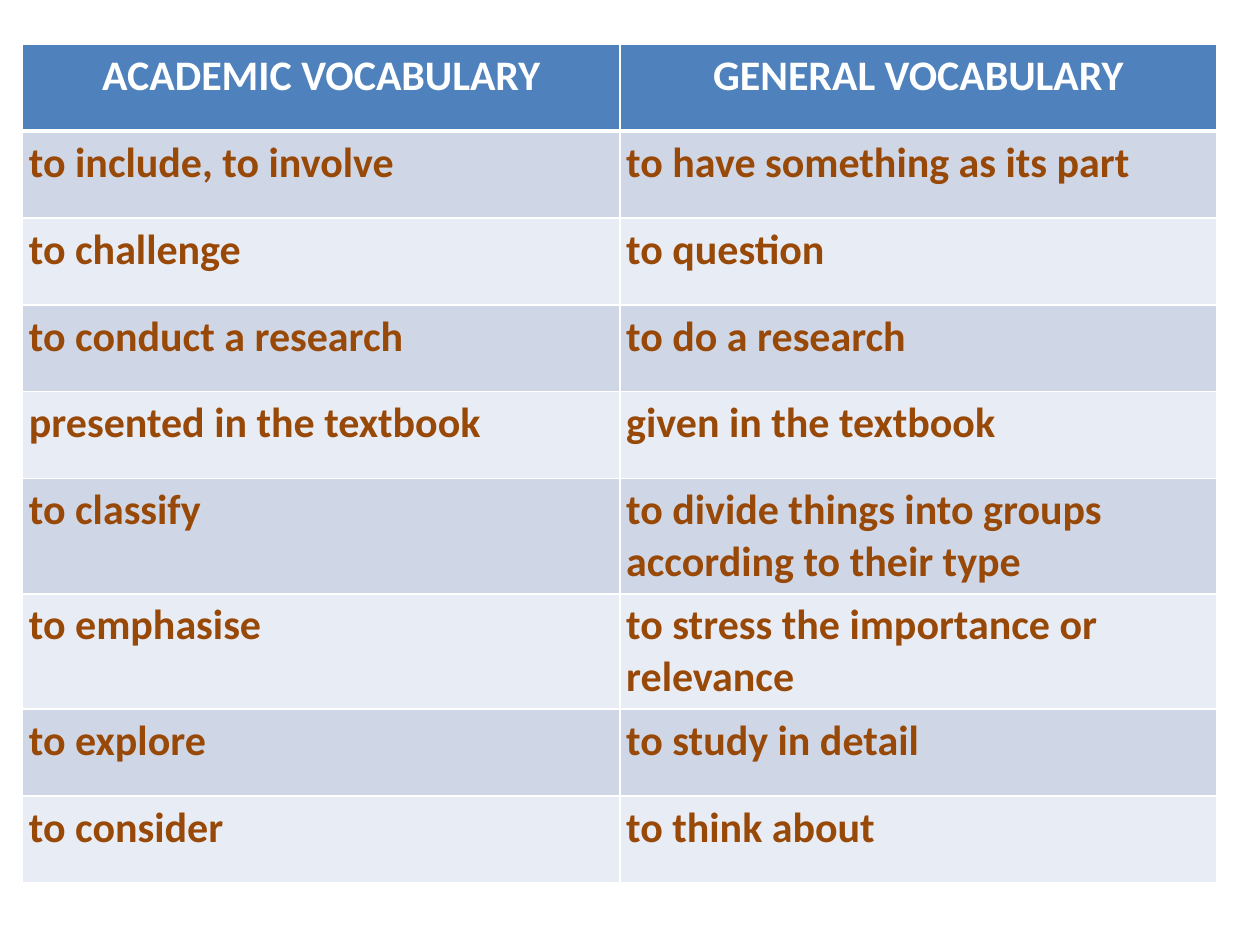
"""Build a slide with a table that pairs academic and general vocabulary."""
from typing import NamedTuple

from lxml.etree import SubElement
from pptx import Presentation
from pptx.dml.color import RGBColor
from pptx.enum.text import PP_ALIGN as Align
from pptx.oxml.ns import qn
from pptx.util import Inches, Pt

WHITE, BLUE, BROWN = "FFFFFF", "4F81BD", "984807"
BANDS = ("CFD7E7", "E8ECF4")
ROW_HEIGHT, COL_WIDTH, MARGIN = 0.69, 4.74, 0.05


class Entry(NamedTuple):
    academic: str
    general: str


HEADER = Entry("ACADEMIC VOCABULARY", "GENERAL VOCABULARY")
ENTRIES = [
    Entry("to include, to involve", "to have something as its part"),
    Entry("to challenge", "to question"),
    Entry("to conduct a research", "to do a research"),
    Entry("presented in the textbook", "given in the textbook"),
    Entry("to classify", "to divide things into groups according to their type"),
    Entry("to emphasise", "to stress the importance or relevance"),
    Entry("to explore", "to study in detail"),
    Entry("to consider", "to think about"),
]


def rgb(value: str) -> RGBColor:
    return RGBColor.from_string(value)


def write(tf, text: str, *, color: str, align: Align = Align.LEFT, size: int = 24) -> None:
    p = tf.paragraphs[0]
    p.alignment = align
    r = p.add_run()
    r.text = text
    r.font.name, r.font.size, r.font.bold = "Calibri", Pt(size), True
    r.font.color.rgb = rgb(color)


def set_borders(cell, top: float, bottom: float) -> None:
    tc_pr = cell._tc.get_or_add_tcPr()
    for side, width in (("L", 1), ("R", 1), ("T", top), ("B", bottom)):
        ln = SubElement(tc_pr, qn(f"a:ln{side}"), w=str(Pt(width)))
        fill = SubElement(ln, qn("a:solidFill"))
        SubElement(fill, qn("a:srgbClr"), val=WHITE)


def fill_row(table, index: int, entry: Entry) -> None:
    is_header = index == 0
    table.rows[index].height = Inches(ROW_HEIGHT)
    for cell, text in zip(table.rows[index].cells, entry):
        set_borders(cell, top=3 if index == 1 else 1, bottom=3 if is_header else 1)
        cell.fill.solid()
        cell.fill.fore_color.rgb = rgb(BLUE if is_header else BANDS[(index - 1) % 2])
        cell.margin_left = cell.margin_right = Inches(MARGIN)
        cell.margin_top = cell.margin_bottom = Inches(MARGIN)
        write(cell.text_frame, text, color=WHITE if is_header else BROWN,
              align=Align.CENTER if is_header else Align.LEFT)


def main() -> None:
    prs = Presentation()
    prs.slide_width, prs.slide_height = Inches(10), Inches(7.5)
    s = prs.slides.add_slide(prs.slide_layouts[6])
    rows = [HEADER, *ENTRIES]
    table = s.shapes.add_table(
        len(rows), len(HEADER), Inches(0.18), Inches(0.35),
        Inches(COL_WIDTH * len(HEADER)), Inches(ROW_HEIGHT * len(rows))).table
    for column in table.columns:
        column.width = Inches(COL_WIDTH)
    for index, entry in enumerate(rows):
        fill_row(table, index, entry)
    prs.save("out.pptx")


if __name__ == "__main__":
    main()
